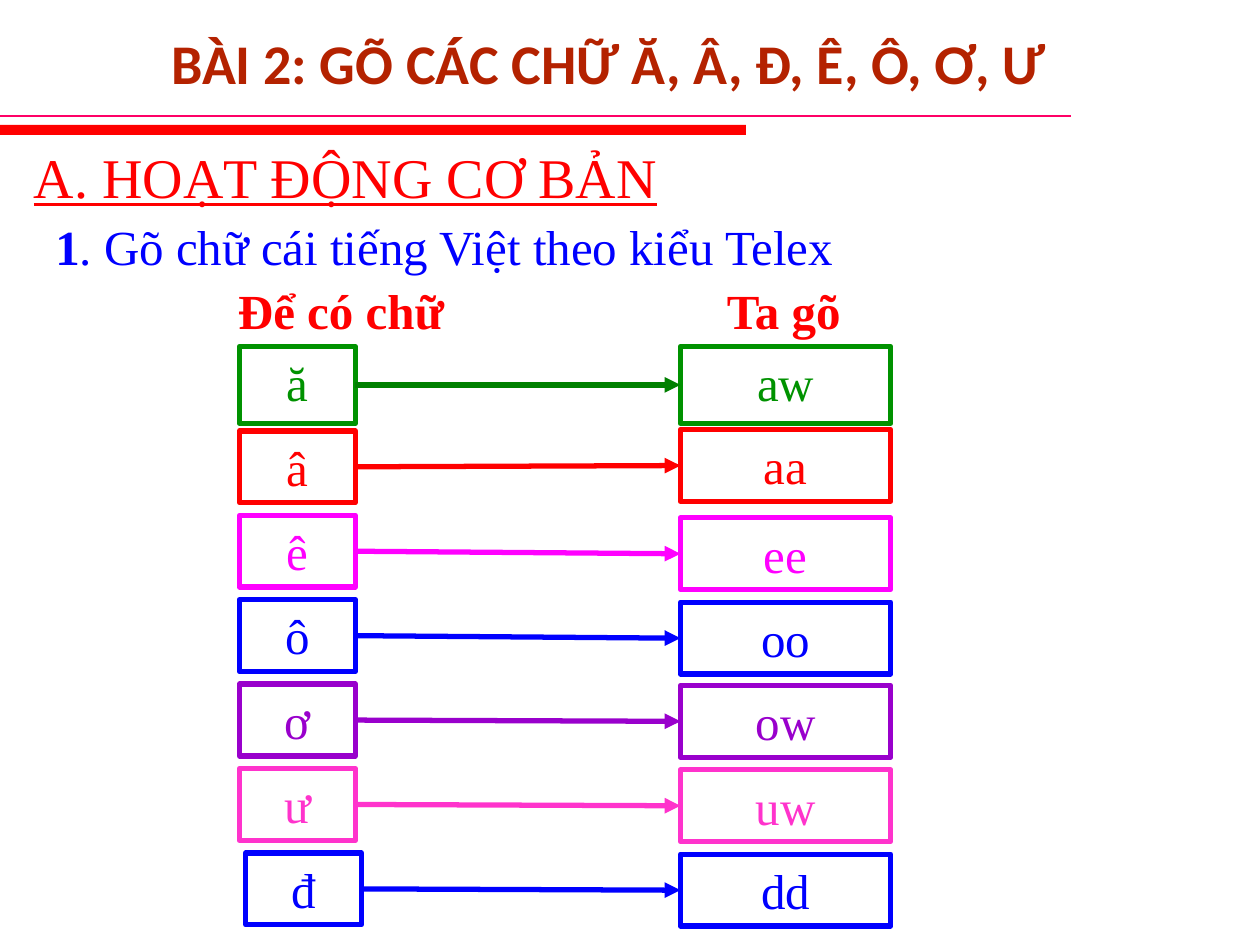
from lxml import etree
from pptx import Presentation
from pptx.dml.color import RGBColor
from pptx.enum.shapes import MSO_CONNECTOR, MSO_SHAPE
from pptx.enum.text import MSO_ANCHOR, PP_ALIGN
from pptx.oxml.ns import qn
from pptx.util import Inches, Pt

STRAIGHT = MSO_CONNECTOR.STRAIGHT
RECTANGLE = MSO_SHAPE.RECTANGLE
LEFT, CENTER = PP_ALIGN.LEFT, PP_ALIGN.CENTER
TOP, MIDDLE = MSO_ANCHOR.TOP, MSO_ANCHOR.MIDDLE
RIGHT_SIDE, LEFT_SIDE = 3, 1

RED, BLUE = "FF0000", "0000FF"


def write(box, *texts, color, size=28, font="Times New Roman", bold=(False,),
          underline=False, align=LEFT, anchor=TOP):
    """Fill the box with one paragraph, one span for each text and bold flag."""
    frame = box.text_frame
    frame.word_wrap = True
    frame.vertical_anchor = anchor
    para = frame.paragraphs[0]
    para.alignment = align
    for text, is_bold in zip(texts, bold):
        span = para.add_run()
        span.text = text
        span.font.name = font
        span.font.size = Pt(size)
        span.font.bold = is_bold
        span.font.underline = underline
        span.font.color.rgb = RGBColor.from_string(color)


def draw_line(start, end, color, width):
    line = page.shapes.add_connector(STRAIGHT, *map(Inches, start + end))
    line.line.color.rgb = RGBColor.from_string(color)
    line.line.width = Pt(width)
    etree.SubElement(line._element.spPr, qn("a:effectLst"))
    return line


deck = Presentation()
deck.slide_width, deck.slide_height = Inches(10), Inches(7.5)
page = deck.slides.add_slide(deck.slide_layouts[5])

# Title and the two rules under it
title = page.shapes.title
title.left, title.top, title.width, title.height = map(Inches, (0.55, 0.17, 8.56, 0.64))
write(title, "BÀI 2: GÕ CÁC CHỮ Ă, Â, Đ, Ê, Ô, Ơ, Ư", color="B42200", size=32,
      font="Calibri", bold=(True,), align=CENTER, anchor=MIDDLE)

draw_line((0, 0.92), (8.5, 0.92), "FF0066", 0.75)
bar = page.shapes.add_shape(RECTANGLE, *map(Inches, (0, 0.99, 5.92, 0.08)))
bar.shadow.inherit = False
bar.fill.solid()
bar.fill.fore_color.rgb = RGBColor.from_string(RED)
bar.line.fill.background()

# Headings
headings = [
    ((0.17, 1.08, 5.75, 0.58), ["A. HOẠT ĐỘNG CƠ BẢN"],
     dict(color=RED, size=32, underline=True)),
    ((0.34, 1.67, 7.81, 0.57), ["1", ". Gõ chữ cái tiếng Việt theo kiểu Telex"],
     dict(color=BLUE, bold=(True, False))),
    ((1.79, 2.18, 2.92, 0.57), ["Để có chữ"], dict(color=RED, bold=(True,))),
    ((5.67, 2.18, 2.08, 0.57), ["Ta gõ"], dict(color=RED, bold=(True,))),
]
for place, texts, style in headings:
    write(page.shapes.add_textbox(*map(Inches, place)), *texts, **style)

# Letter boxes, each joined to the box with its keys
LETTER_LEFT, LETTER_WIDTH = 1.9, 0.92
KEYS_LEFT, KEYS_WIDTH = 5.4, 1.67
FIRST_TOP, ROW_STEP = 2.75, 0.67

# letter, keys, box colour, arrow colour, height, letter shift right, keys shift down
pairs = [
    ("ă", "aw", "009200", "008000", 0.61, 0, 0),
    ("â", "aa", RED, RED, 0.57, 0, -0.01),
    ("ê", "ee", "FF00FF", "FF00FF", 0.57, 0, 0.02),
    ("ô", "oo", BLUE, BLUE, 0.57, 0, 0.02),
    ("ơ", "ow", "9900CC", "9900CC", 0.57, 0, 0.01),
    ("ư", "uw", "FF33CC", "FF33CC", 0.57, 0, 0.01),
    ("đ", "dd", BLUE, BLUE, 0.57, 0.05, 0.01),
]
for row, (letter, keys, color, arrow_color, height, right, down) in enumerate(pairs):
    top = FIRST_TOP + row * ROW_STEP
    boxes = []
    for text, place in (
        (letter, (LETTER_LEFT + right, top, LETTER_WIDTH, height)),
        (keys, (KEYS_LEFT, top + down, KEYS_WIDTH, height)),
    ):
        box = page.shapes.add_shape(RECTANGLE, *map(Inches, place))
        box.shadow.inherit = False
        box.fill.background()
        box.line.color.rgb = RGBColor.from_string(color)
        box.line.width = Pt(3)
        write(box, text, color=color, align=CENTER)
        boxes.append(box)

    middle = top + height / 2
    arrow = draw_line((LETTER_LEFT + LETTER_WIDTH, middle), (KEYS_LEFT, middle),
                      arrow_color, 3)
    arrow.begin_connect(boxes[0], RIGHT_SIDE)
    arrow.end_connect(boxes[1], LEFT_SIDE)
    etree.SubElement(arrow.line._get_or_add_ln(), qn("a:tailEnd"), type="triangle")

deck.save("out.pptx")
